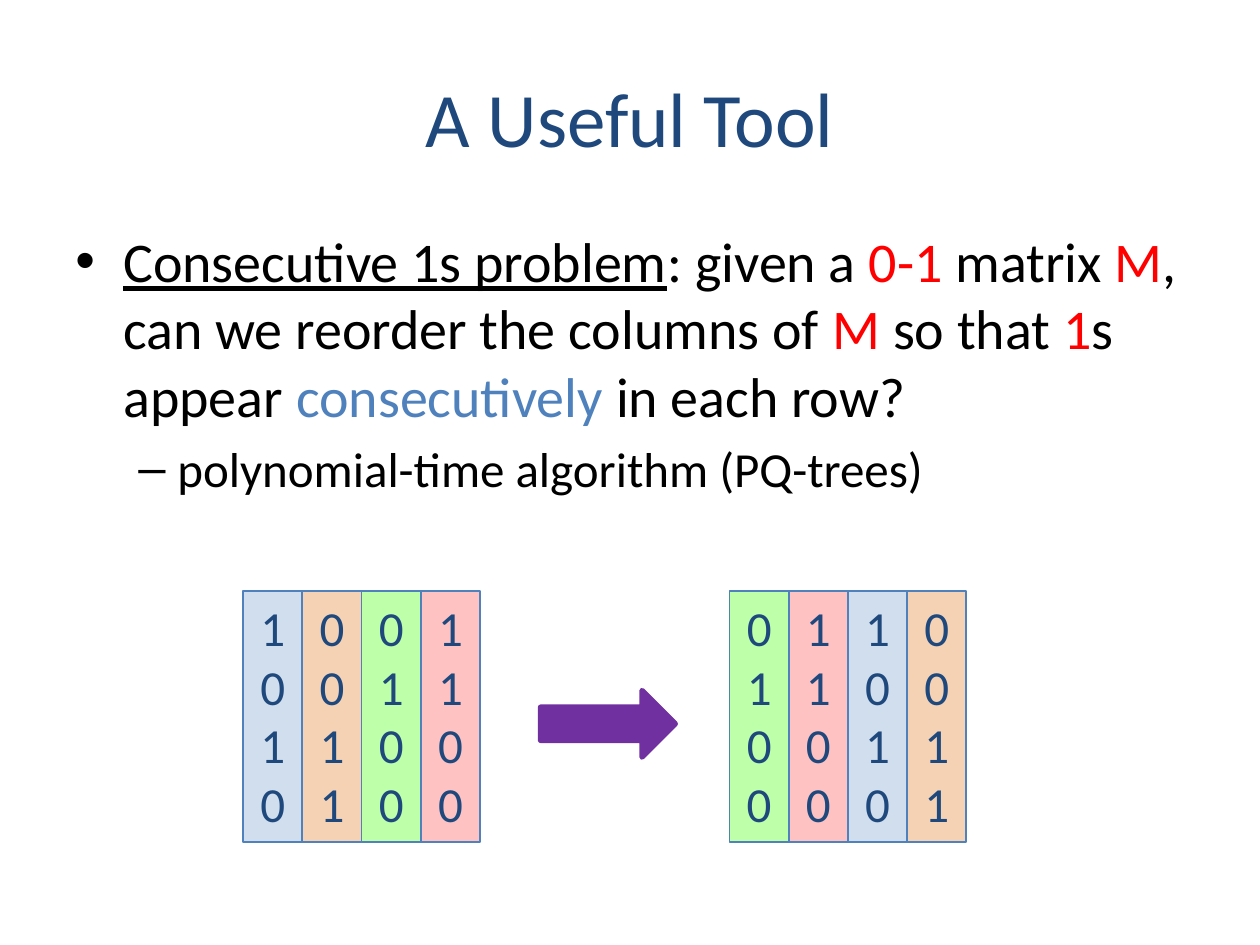
from pptx import Presentation
from pptx.dml.color import RGBColor
from pptx.enum.shapes import MSO_SHAPE
from pptx.enum.text import MSO_ANCHOR, PP_ALIGN
from pptx.oxml.ns import qn
from pptx.util import Pt
from lxml.etree import SubElement

PX = 9144  # 100 px to the inch
NAVY = RGBColor(0x1F, 0x49, 0x7D)
BLUE = RGBColor(0x4F, 0x81, 0xBD)
RED = RGBColor(0xFF, 0x00, 0x00)
GREEN = RGBColor(0x66, 0xFF, 0x33)
ORANGE = RGBColor(0xE4, 0x6C, 0x0A)
PURPLE = RGBColor(0x70, 0x30, 0xA0)
BLACK = RGBColor(0, 0, 0)


def write(para, text, size=28, color=BLACK, line=None, align=None):
    run = para.add_run()
    run.text = text
    font = run.font
    font.name, font.size, font.underline = "Calibri", Pt(size), line
    font.color.rgb = color
    if align is not None:
        para.alignment = align


def bullet(para, mark, left, hang, space):
    para.space_before = Pt(space)
    props = para._p.get_or_add_pPr()
    props.set("marL", str(left * PX))
    props.set("indent", str(-hang * PX))
    SubElement(props, qn("a:buFont")).set("typeface", "Arial")
    SubElement(props, qn("a:buChar")).set("char", mark)


deck = Presentation()
deck.slide_width, deck.slide_height = 1000 * PX, 750 * PX
slide = deck.slides.add_slide(deck.slide_layouts[5])
shapes = slide.shapes

# Title
title = shapes.title
title.left, title.top, title.width, title.height = [n * PX for n in (50, 30, 900, 125)]
title.text_frame.vertical_anchor = MSO_ANCHOR.MIDDLE
write(title.text_frame.paragraphs[0], "A Useful Tool", size=44, color=NAVY,
      align=PP_ALIGN.CENTER)

# Problem statement
body = shapes.add_textbox(50 * PX, 175 * PX, 900 * PX, 231 * PX).text_frame
body.word_wrap = True
para = body.paragraphs[0]
bullet(para, "•", 38, 38, 6.4)
write(para, "Consecutive 1s problem", size=32, line=True)
for text, color in [
    (": given a ", BLACK), ("0-1", RED), (" matrix ", BLACK), ("M", RED),
    (", can we reorder the columns of ", BLACK), ("M", RED),
    (" so that ", BLACK), ("1", RED), ("s appear ", BLACK),
    ("consecutively", BLUE), (" in each row?", BLACK),
]:
    write(para, text, size=32, color=color)
para = body.add_paragraph()
para.level = 1
bullet(para, "–", 81, 31, 5.6)
write(para, "polynomial-time algorithm (PQ-trees)")

# Matrices: each column is a narrow box whose digits wrap one to a line
COLS = {
    "a": ("1010", BLUE, 26),
    "b": ("0011", ORANGE, 30),
    "c": ("0100", GREEN, 42),
    "d": ("1100", RED, 24),
}
WIDE = 47
for left, order in [(193, "abcd"), (579, "cdab")]:
    for i, key in enumerate(order):
        digits, color, alpha = COLS[key]
        box = shapes.add_shape(MSO_SHAPE.RECTANGLE, (left + i * WIDE) * PX, 469 * PX,
                               WIDE * PX, 199 * PX)
        box.shadow.inherit = False
        box.fill.solid()
        box.fill.fore_color.rgb = color
        tint = box.fill._xPr.find(qn("a:solidFill"))[0]
        SubElement(tint, qn("a:alpha")).set("val", str(alpha * 1000))
        box.line.color.rgb = BLUE
        box.line.width = Pt(1)
        frame = box.text_frame
        frame.word_wrap = True
        frame.vertical_anchor = MSO_ANCHOR.TOP
        write(frame.paragraphs[0], digits, color=NAVY, align=PP_ALIGN.CENTER)

# Arrow between the matrices
arrow = shapes.add_shape(MSO_SHAPE.RIGHT_ARROW, 429 * PX, 548 * PX, 107 * PX, 53 * PX)
arrow.shadow.inherit = False
arrow.fill.solid()
arrow.fill.fore_color.rgb = PURPLE
arrow.line.color.rgb = PURPLE
arrow.line.width = Pt(3)

deck.save("out.pptx")
